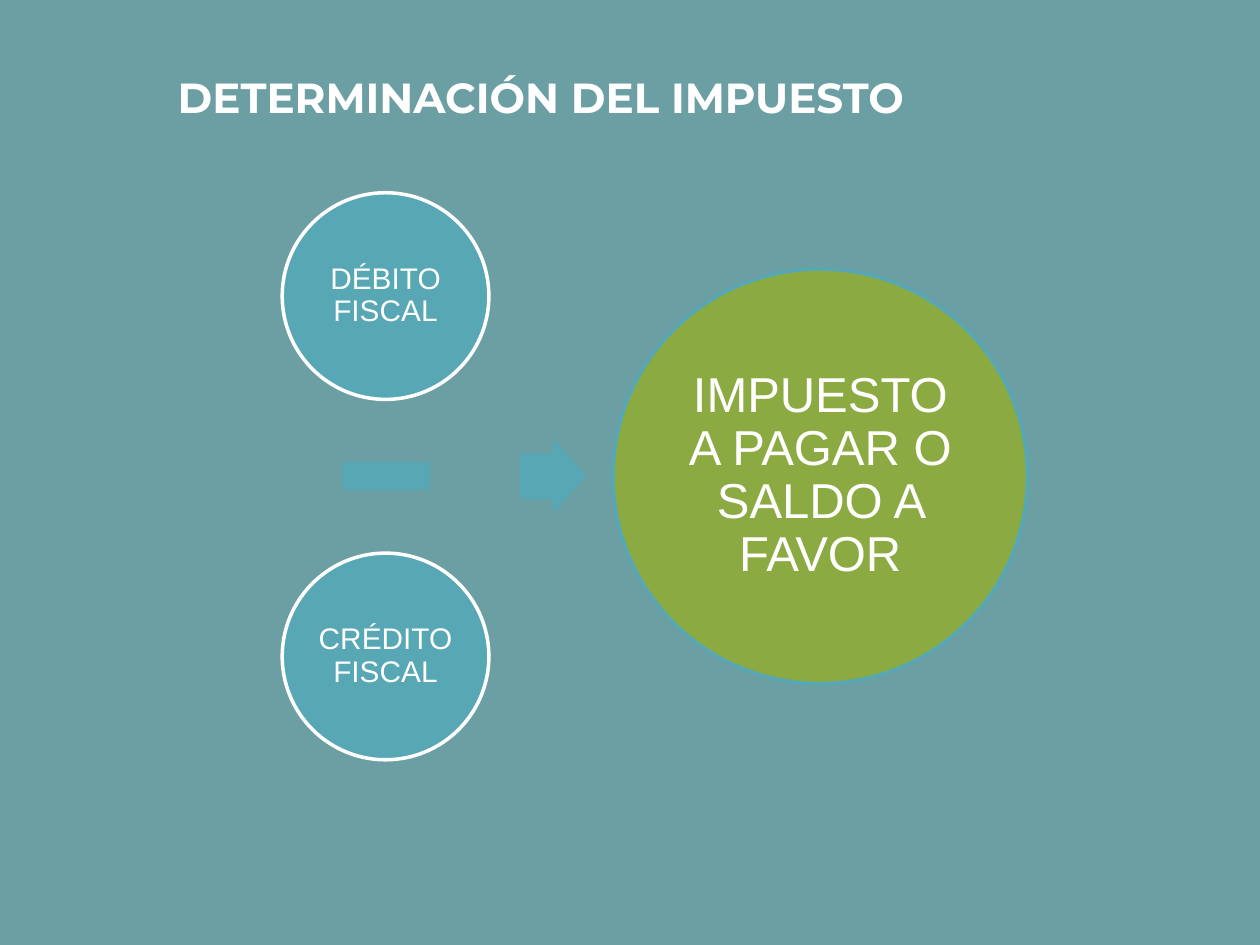
from pptx import Presentation
from pptx.dml.color import RGBColor
from pptx.enum.shapes import MSO_SHAPE as Shape
from pptx.enum.text import MSO_ANCHOR as Anchor, MSO_AUTO_SIZE as Fit, PP_ALIGN as Align
from pptx.util import Inches, Pt

WHITE = RGBColor(0xFF, 0xFF, 0xFF)
SLATE = RGBColor(0x6B, 0x9F, 0xA4)
TEAL = RGBColor(0x57, 0xA7, 0xB5)
GREEN = RGBColor(0x8B, 0xAB, 0x42)
MID = 3.78
LEFT = 3.06
STEP = 1.43


def write(shape, text, size, font="Arial", bold=False, align=Align.CENTER,
          anchor=Anchor.MIDDLE, inset=0.02, indent=0, spacing=0.9):
    """Put formatted text in a shape."""
    frame = shape.text_frame
    frame.auto_size = Fit.NONE
    frame.word_wrap = True
    frame.vertical_anchor = anchor
    frame.margin_left = Inches(inset + indent)
    frame.margin_right = frame.margin_top = frame.margin_bottom = Inches(inset)
    para = frame.paragraphs[0]
    para.alignment = align
    para.line_spacing = spacing
    run = para.add_run()
    run.text = text
    run.font.name = font
    run.font.size = Pt(size)
    run.font.bold = bold
    run.font.color.rgb = WHITE


def draw(slide, kind, x, y, width, height, fill, line=None):
    """Add a filled shape centred on a point."""
    shape = slide.shapes.add_shape(kind, Inches(x - width / 2), Inches(y - height / 2),
                                   Inches(width), Inches(height))
    shape.shadow.inherit = False
    shape.fill.solid()
    shape.fill.fore_color.rgb = fill
    if line is None:
        shape.line.fill.background()
    else:
        shape.line.color.rgb = line
        shape.line.width = Pt(2)
    return shape


def circle(slide, text, x, y, width, fill, line, **style):
    """Add a circle with a label."""
    write(draw(slide, Shape.OVAL, x, y, width, width, fill, line), text, **style)


def head(slide, text):
    """Place and fill the title."""
    title = slide.shapes.title
    title.left, title.top = Inches(0.31), Inches(0.3)
    title.width, title.height = Inches(9.19), Inches(0.77)
    write(title, text, 24, font="Montserrat", bold=True, align=Align.LEFT,
          anchor=Anchor.BOTTOM, inset=0.1, indent=1, spacing=1.0)


def main():
    """Build and save the slide."""
    deck = Presentation()
    deck.slide_width, deck.slide_height = Inches(10), Inches(7.5)
    slide = deck.slides.add_slide(deck.slide_layouts[5])
    slide.background.fill.solid()
    slide.background.fill.fore_color.rgb = SLATE
    head(slide, "DETERMINACIÓN DEL IMPUESTO")
    for text, y in (("DÉBITO FISCAL", MID - STEP), ("CRÉDITO FISCAL", MID + STEP)):
        circle(slide, text, LEFT, y, 1.64, TEAL, WHITE, size=17)
    draw(slide, Shape.MATH_MINUS, LEFT, MID, 0.95, 0.95, TEAL)
    arrow = draw(slide, Shape.RIGHT_ARROW, 4.39, MID, 0.52, 0.61, TEAL)
    arrow.adjustments[0] = 0.6
    arrow.adjustments[1] = 0.5
    circle(slide, "IMPUESTO A PAGAR O SALDO A FAVOR", 6.51, MID, 3.29, GREEN, TEAL,
           size=28, inset=0.04)
    deck.save("out.pptx")


if __name__ == "__main__":
    main()
